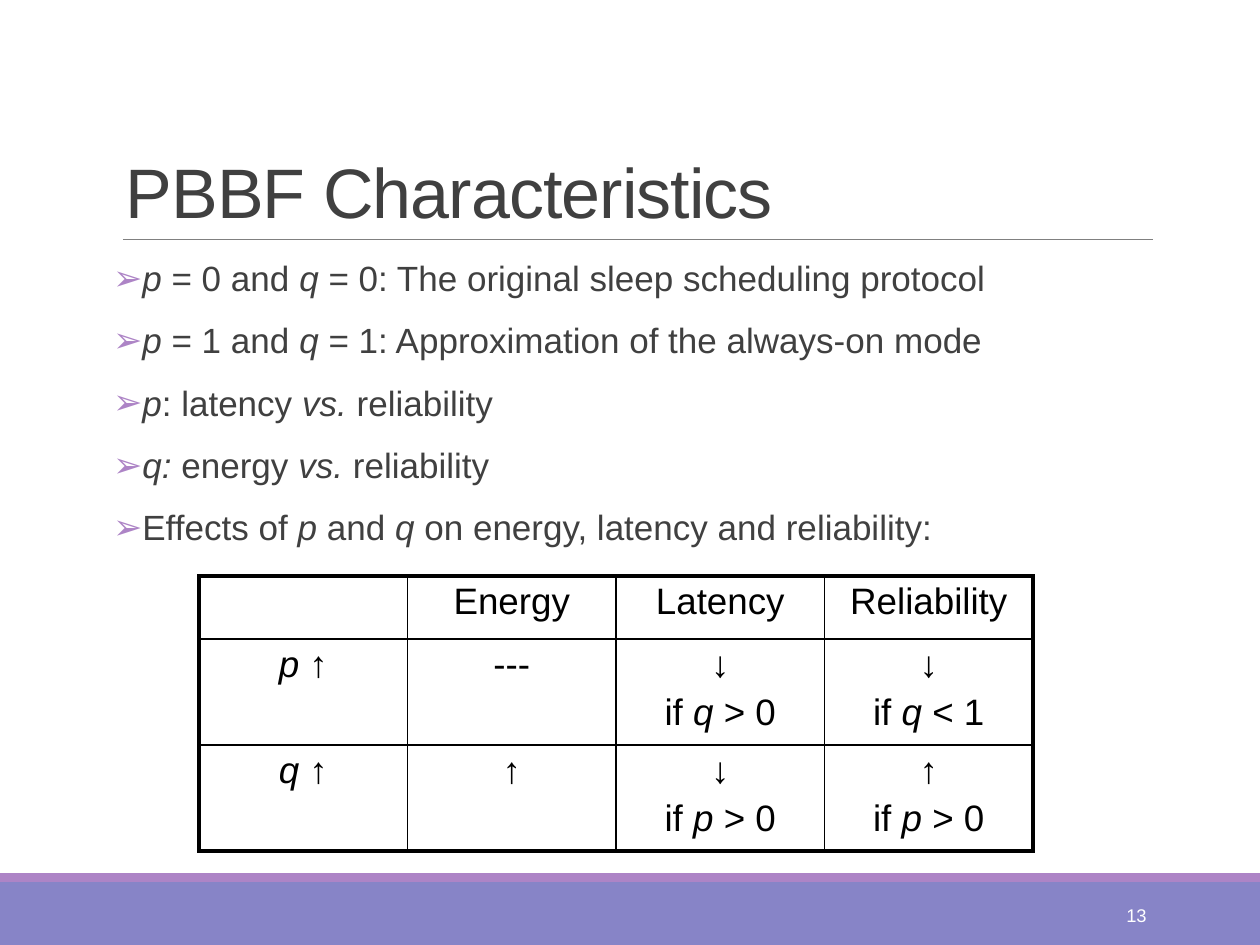
import lxml.etree
import pptx
import pptx.dml.color
import pptx.enum.shapes
import pptx.enum.text
import pptx.oxml.ns
import pptx.util

PX = 914400 / 126
COLORS = {
    "text": "404040",
    "rule": "808080",
    "band": "8784C7",
    "accent": "AD84C6",
    "grid": "000000",
    "number": "FFFFFF",
}
ALIGN = pptx.enum.text.PP_ALIGN
ANCHOR = pptx.enum.text.MSO_ANCHOR
CHARACTERISTICS = [
    "*p* = 0 and *q* = 0: The original sleep scheduling protocol",
    "*p* = 1 and *q* = 1: Approximation of the always-on mode",
    "*p*: latency *vs.* reliability",
    "*q:* energy *vs. *reliability",
    "Effects of *p* and *q* on energy, latency and reliability:",
]
EFFECTS = [
    ["", "Energy", "Latency", "Reliability"],
    ["*p *↑", "---", "↓\nif *q* > 0", "↓\nif *q* < 1"],
    ["*q* ↑", "↑", "↓\nif *p* > 0", "↑\nif *p* > 0"],
]


def px(length):
    """Turn px into EMU."""
    return pptx.util.Emu(round(length * PX))


def rgb(name):
    """Look up a named colour."""
    return pptx.dml.color.RGBColor.from_string(COLORS[name])


def add_xml(parent, tag, **attributes):
    """Append a DrawingML element and return it."""
    return lxml.etree.SubElement(parent, pptx.oxml.ns.qn(tag), attributes)


def write_text(frame, text, size, color="text", align=ALIGN.LEFT, before=0,
               after=0, line=1.0, tracking=None):
    """Write one paragraph per line, with italics between asterisks."""
    for index, content in enumerate(text.split("\n")):
        paragraph = frame.add_paragraph() if index else frame.paragraphs[0]
        paragraph.alignment = align
        paragraph.line_spacing = line
        paragraph.space_before = pptx.util.Pt(before)
        paragraph.space_after = pptx.util.Pt(after)
        for position, piece in enumerate(content.split("*")):
            if not piece:
                continue
            run = paragraph.add_run()
            run.text = piece
            run.font.name = "Arial"
            run.font.size = pptx.util.Pt(size)
            run.font.italic = position % 2 == 1
            run.font.color.rgb = rgb(color)
            if tracking is not None:
                run.font._element.set("spc", str(tracking))


def place(shape, left, top, width, height):
    """Move a shape to a box."""
    shape.left, shape.top = px(left), px(top)
    shape.width, shape.height = px(width), px(height)


def add_band(slide, left, top, width, height, color):
    """Draw a plain colour band."""
    band = slide.shapes.add_shape(
        pptx.enum.shapes.MSO_SHAPE.RECTANGLE,
        px(left), px(top), px(width), px(height))
    band.shadow.inherit = False
    band.fill.solid()
    band.fill.fore_color.rgb = rgb(color)
    band.line.fill.background()


def add_footer(slide, left, top, width, height, number):
    """Draw the footer bands and the slide number."""
    accent_height = 9
    add_band(slide, left, top + accent_height, width, height - accent_height, "band")
    add_band(slide, left, top, width, accent_height, "accent")
    page = slide.shapes.add_textbox(
        px(left + width - 237), px(top + 17), px(136), px(50))
    page.text_frame.word_wrap = True
    page.text_frame.vertical_anchor = ANCHOR.MIDDLE
    write_text(page.text_frame, number, 10.5, "number", ALIGN.RIGHT)


def add_heading(slide, left, top, width, height, text):
    """Fill the title and rule it off below."""
    heading = slide.shapes.title
    place(heading, left, top, width, height)
    frame = heading.text_frame
    frame.auto_size = pptx.enum.text.MSO_AUTO_SIZE.NONE
    frame.vertical_anchor = ANCHOR.BOTTOM
    write_text(frame, text, 40, line=0.85, tracking=-50)
    bottom = px(top + height)
    rule = slide.shapes.add_connector(
        pptx.enum.shapes.MSO_CONNECTOR.STRAIGHT,
        px(left + 10), bottom, px(left + width), bottom)
    rule.line.color.rgb = rgb("rule")
    rule.line.width = pptx.util.Pt(0.5)
    add_xml(rule._element.spPr, "a:effectLst")


def add_characteristics(slide, left, top, width, height, points):
    """Fill the body with arrow-bulleted points."""
    body = slide.placeholders[1]
    place(body, left, top, width, height)
    frame = body.text_frame
    frame.auto_size = pptx.enum.text.MSO_AUTO_SIZE.NONE
    frame.vertical_anchor = ANCHOR.TOP
    frame.margin_left = frame.margin_right = 0
    write_text(frame, "\n".join(points), 20, before=12, after=2, line=0.9)
    for paragraph in frame.paragraphs:
        properties = paragraph._p.get_or_add_pPr()
        indent = pptx.util.Inches(0.1)
        properties.set("marL", str(indent))
        properties.set("indent", str(-indent))
        bullet_color = add_xml(properties, "a:buClr")
        add_xml(bullet_color, "a:srgbClr", val=COLORS["accent"])
        add_xml(properties, "a:buChar", char="➢")


def add_border(cell, side, width):
    """Draw one side of a cell."""
    border = add_xml(cell._tc.get_or_add_tcPr(), f"a:ln{side}",
                     w=str(pptx.util.Pt(width)))
    fill = add_xml(border, "a:solidFill")
    add_xml(fill, "a:srgbClr", val=COLORS["grid"])


def add_effects(slide, left, top, width, row_heights, rows):
    """Draw the effects table with a heavy outer frame."""
    last_row, last_column = len(rows) - 1, len(rows[0]) - 1
    table = slide.shapes.add_table(
        len(rows), len(rows[0]), px(left), px(top), px(width),
        px(sum(row_heights))).table
    table.first_row = table.horz_banding = False
    for column in table.columns:
        column.width = px(width / len(rows[0]))
    for r, texts in enumerate(rows):
        table.rows[r].height = px(row_heights[r])
        for c, text in enumerate(texts):
            cell = table.cell(r, c)
            cell.margin_left = cell.margin_right = px(9)
            cell.margin_top = cell.margin_bottom = px(5)
            outer = {"L": c == 0, "R": c == last_column,
                     "T": r == 0, "B": r == last_row}
            for side, is_outer in outer.items():
                add_border(cell, side, 2.25 if is_outer else 1)
            cell.fill.background()
            write_text(cell.text_frame, text, 21, "grid", ALIGN.CENTER, before=4)


def main():
    """Build and save the slide."""
    presentation = pptx.Presentation()
    presentation.slide_width, presentation.slide_height = px(1260), px(945)
    slide = presentation.slides.add_slide(presentation.slide_layouts[1])
    add_footer(slide, 0, 873, 1260, 72, "13")
    add_heading(slide, 113, 39, 1040, 200, "PBBF Characteristics")
    add_characteristics(slide, 113, 255, 1040, 554, CHARACTERISTICS)
    add_effects(slide, 199, 576, 834, [63, 106, 106], EFFECTS)
    presentation.save("out.pptx")


if __name__ == "__main__":
    main()
